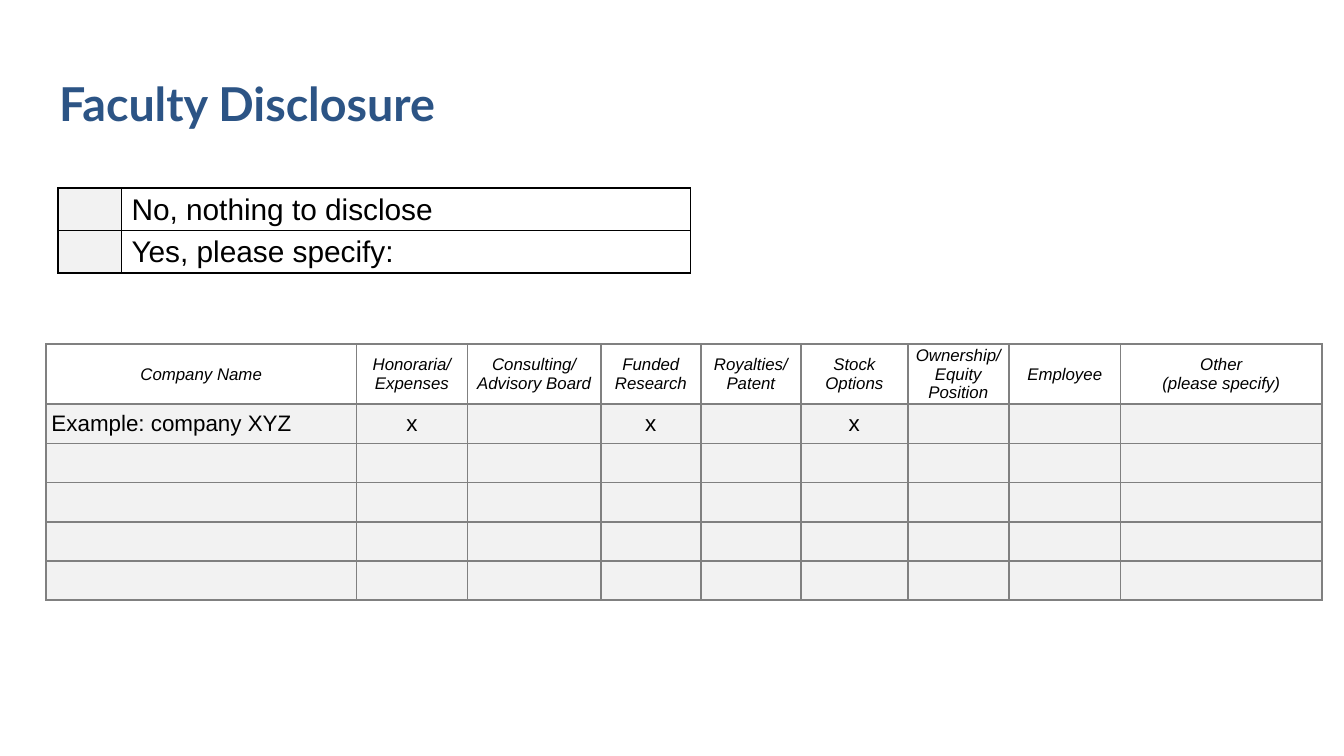
from dataclasses import dataclass

from lxml.etree import SubElement
from pptx import Presentation
from pptx.dml.color import RGBColor
from pptx.enum.text import MSO_ANCHOR as Anchor, MSO_AUTO_SIZE as AutoSize, PP_ALIGN as Align
from pptx.oxml.ns import qn
from pptx.util import Pt

TITLE_BLUE = RGBColor(0x2C, 0x54, 0x85)
BLACK = RGBColor(0, 0, 0)
GRAY = RGBColor(0x80, 0x80, 0x80)
WHITE = RGBColor(0xFF, 0xFF, 0xFF)
ENTRY_FILL = RGBColor(0xF2, 0xF2, 0xF2)


@dataclass
class CellStyle:
    size: float
    fill: RGBColor = WHITE
    align: Align = Align.LEFT
    anchor: Anchor = Anchor.MIDDLE
    italic: bool = False
    side_margin: float = 3
    line_spacing: float = 1.0


@dataclass
class Grid:
    left: float
    top: float
    widths: list[float]
    heights: list[float]
    border: RGBColor
    rows: list[list[tuple[str, CellStyle]]]


def set_borders(cell, color: RGBColor) -> None:
    properties = cell._tc.get_or_add_tcPr()
    for index, side in enumerate(("lnL", "lnR", "lnT", "lnB")):
        line = SubElement(properties, qn(f"a:{side}"), w=str(Pt(1)))
        fill = SubElement(line, qn("a:solidFill"))
        SubElement(fill, qn("a:srgbClr"), val=str(color))
        properties.insert(index, line)


def fill_cell(cell, text: str, style: CellStyle) -> None:
    cell.fill.solid()
    cell.fill.fore_color.rgb = style.fill
    cell.margin_left = cell.margin_right = Pt(style.side_margin)
    cell.margin_top = cell.margin_bottom = 0
    cell.vertical_anchor = style.anchor
    cell.text = text
    for paragraph in cell.text_frame.paragraphs:
        paragraph.alignment = style.align
        paragraph.line_spacing = style.line_spacing
        font = paragraph.font
        font.name, font.size, font.italic = "Arial", Pt(style.size), style.italic
        font.color.rgb = BLACK
        if not text:  # keeps an empty row from growing
            SubElement(paragraph._p, qn("a:endParaRPr"), sz=str(int(style.size * 100)))


def draw_grid(slide, grid: Grid) -> None:
    frame = slide.shapes.add_table(
        len(grid.heights), len(grid.widths), Pt(grid.left), Pt(grid.top),
        Pt(sum(grid.widths)), Pt(sum(grid.heights)))
    table = frame.table
    table.first_row = table.horz_banding = False
    for column, width in zip(table.columns, grid.widths):
        column.width = Pt(width)
    for row, height, entries in zip(table.rows, grid.heights, grid.rows):
        row.height = Pt(height)
        for cell, (text, style) in zip(row.cells, entries):
            fill_cell(cell, text, style)
            set_borders(cell, grid.border)


def add_title(slide, text: str) -> None:
    title = slide.shapes.title
    title.left, title.top, title.width, title.height = Pt(24.5), Pt(32.5), Pt(408), Pt(45)
    frame = title.text_frame
    frame.text = text
    frame.auto_size = AutoSize.NONE
    frame.vertical_anchor = Anchor.MIDDLE
    frame.margin_left = frame.margin_right = frame.margin_top = frame.margin_bottom = Pt(7.2)
    paragraph = frame.paragraphs[0]
    paragraph.alignment = Align.LEFT
    font = paragraph.font
    font.name, font.size, font.bold = "Lato", Pt(25), True
    font.color.rgb = TITLE_BLUE


CHECKBOX = CellStyle(9, ENTRY_FILL)
ANSWER = CellStyle(16, anchor=Anchor.TOP, side_margin=5.5, line_spacing=1.15)
HEADER = CellStyle(9, align=Align.CENTER, italic=True)
COMPANY = CellStyle(12, ENTRY_FILL)
MARK = CellStyle(12, ENTRY_FILL, Align.CENTER)

ANSWERS = ["No, nothing to disclose", "Yes, please specify:"]
HEADERS = ["Company Name", "Honoraria/\nExpenses", "Consulting/ Advisory Board",
           "Funded Research", "Royalties/ Patent", "Stock Options",
           "Ownership/ Equity Position", "Employee", "Other\n(please specify)"]
EXAMPLE = ["Example: company XYZ", "x", "", "x", "", "x", "", "", ""]
BLANK_ROWS = 4


def main() -> None:
    presentation = Presentation()
    presentation.slide_width, presentation.slide_height = Pt(720), Pt(405)
    slide = presentation.slides.add_slide(presentation.slide_layouts[5])
    add_title(slide, "Faculty Disclosure")

    draw_grid(slide, Grid(
        31, 100.8, [34, 305], [22.8] * len(ANSWERS), BLACK,
        [[("", CHECKBOX), (answer, ANSWER)] for answer in ANSWERS]))

    entry_styles = [COMPANY] + [MARK] * (len(HEADERS) - 1)
    entries = [EXAMPLE] + [[""] * len(HEADERS)] * BLANK_ROWS
    draw_grid(slide, Grid(
        24.6, 184.4, [166.3, 59.5, 71.5, 53.6, 53.6, 57.3, 54.1, 60, 107.7],
        [32.2] + [21] * len(entries), GRAY,
        [[(header, HEADER) for header in HEADERS]]
        + [list(zip(entry, entry_styles)) for entry in entries]))

    presentation.save("out.pptx")


if __name__ == "__main__":
    main()
